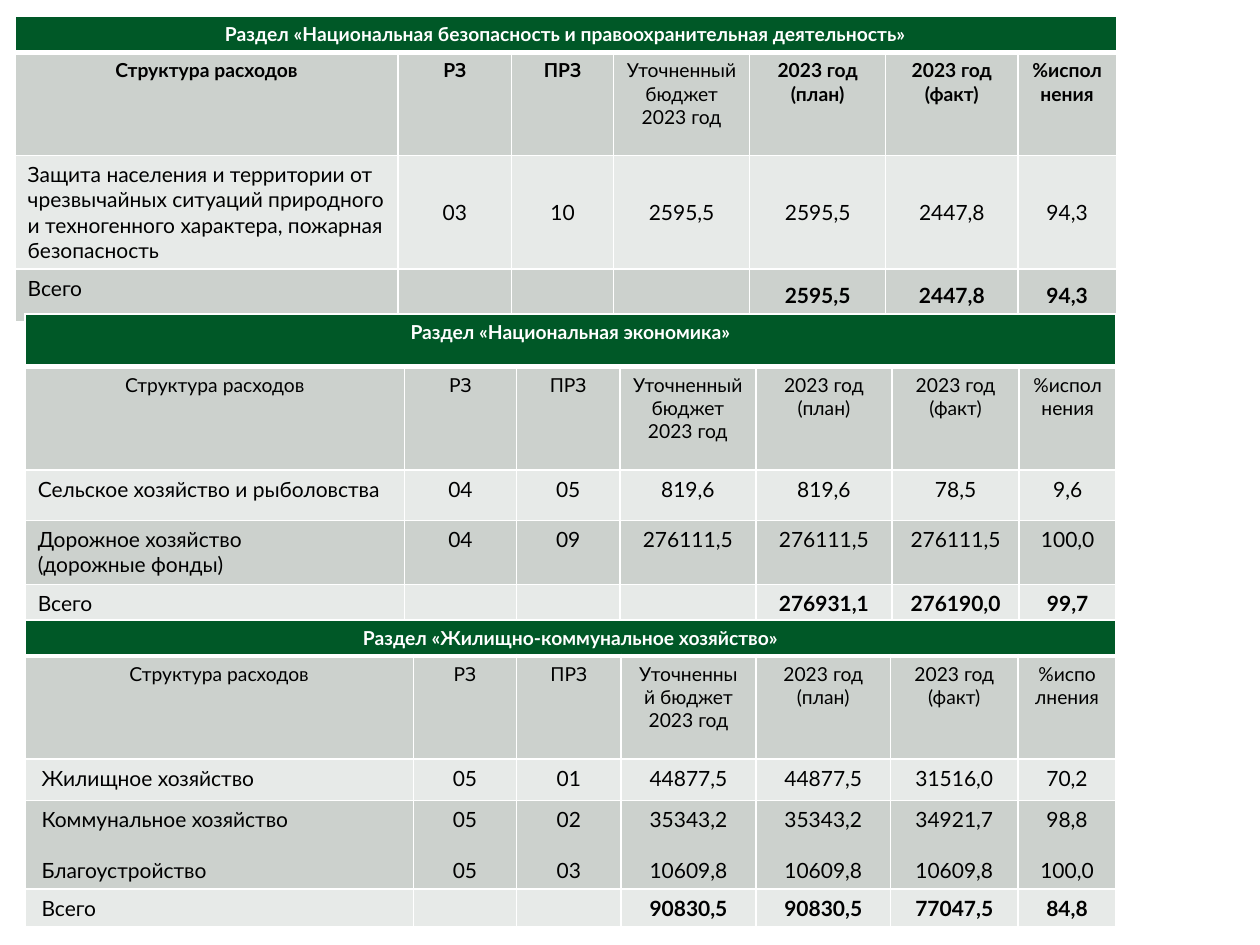
from lxml.etree import SubElement
from pptx import Presentation
from pptx.dml.color import RGBColor
from pptx.enum.text import MSO_ANCHOR, PP_ALIGN
from pptx.oxml.ns import qn
from pptx.util import Inches, Pt

WHITE = RGBColor(0xFF, 0xFF, 0xFF)
BLACK = RGBColor(0, 0, 0)
GREEN = RGBColor(0x00, 0x58, 0x27)
DARK_BAND = RGBColor(0xCC, 0xD1, 0xCD)
LIGHT_BAND = RGBColor(0xE7, 0xEA, 0xE8)

HEADER = ["Структура расходов", "РЗ", "ПРЗ", "Уточненный бюджет 2023 год",
          "2023 год\n(план)", "2023 год (факт)", "%исполнения"]
BUDGET_COL = 3


class BudgetSlide:
    font = "Lato"
    small, normal = Pt(11), Pt(12)

    def __init__(self, prs):
        self.s = prs.slides.add_slide(prs.slide_layouts[6])

    def borders(self, cell, bottom=1):
        tcPr = cell._tc.get_or_add_tcPr()
        for side, width in (("L", 1), ("R", 1), ("T", 1), ("B", bottom)):
            ln = SubElement(tcPr, qn(f"a:ln{side}"), w=str(Pt(width)))
            fill = SubElement(ln, qn("a:solidFill"))
            SubElement(fill, qn("a:srgbClr"), val=str(WHITE))

    def cell(self, cell, text, fill, size, color=BLACK, bold=False,
             align=PP_ALIGN.CENTER, gap=0, margin=0.1, bottom=1):
        self.borders(cell, bottom)
        cell.fill.solid()
        cell.fill.fore_color.rgb = fill
        cell.margin_left = cell.margin_right = Inches(margin)
        tf = cell.text_frame
        tf.text = text
        for i, p in enumerate(tf.paragraphs):
            p.alignment = align
            if i and gap:
                p.space_before = Pt(gap)
            p.font.name, p.font.size, p.font.bold = self.font, size, bold
            p.font.color.rgb = color
            if not text:  # keeps an empty cell from stretching its row
                p._p.get_or_add_endParaRPr().set("sz", str(int(size.pt * 100)))

    def table(self, left, top, cols, heights, title, rows,
              bold_header=False, middle=False, gap=0, margin=0.1):
        grid = self.s.shapes.add_table(
            len(heights), len(cols), Inches(left), Inches(top),
            Inches(sum(cols)), Inches(sum(heights))).table
        grid.first_row = grid.horz_banding = False
        for column, width in zip(grid.columns, cols):
            column.width = Inches(width)
        for row, height in zip(grid.rows, heights):
            row.height = Inches(height)

        # Section title across all columns
        grid.cell(0, 0).merge(grid.cell(0, len(cols) - 1))
        for c in range(len(cols)):
            self.cell(grid.cell(0, c), "" if c else title, GREEN, self.small,
                      WHITE, True, margin=margin, bottom=3)

        # Column headings
        for c, text in enumerate(HEADER):
            self.cell(grid.cell(1, c), text, DARK_BAND, self.small,
                      bold=bold_header and c != BUDGET_COL, margin=margin)

        # Expense lines; the last one is the total
        for r, values in enumerate(rows, 2):
            is_total = r == len(heights) - 1
            for c, text in enumerate(values):
                cell = grid.cell(r, c)
                self.cell(cell, text, DARK_BAND if r % 2 else LIGHT_BAND,
                          self.normal, bold=is_total and c > 0,
                          align=PP_ALIGN.CENTER if c else PP_ALIGN.LEFT,
                          gap=gap, margin=margin)
                if middle and c:
                    cell.vertical_anchor = MSO_ANCHOR.MIDDLE


def main():
    prs = Presentation()
    prs.slide_width, prs.slide_height = Inches(10), Inches(7.5)
    slide = BudgetSlide(prs)

    # National security
    slide.table(
        0.12, 0.13, [3.04, 0.9, 0.81, 1.08, 1.08, 1.05, 0.78],
        [0.24, 0.82, 0.85, 0.42],
        "Раздел «Национальная безопасность и правоохранительная деятельность»",
        [["Защита населения и территории от чрезвычайных ситуаций природного "
          "и техногенного характера, пожарная безопасность",
          "03", "10", "2595,5", "2595,5", "2447,8", "94,3"],
         ["Всего", "", "", "", "2595,5", "2447,8", "94,3"]],
        bold_header=True, middle=True)

    # National economy
    slide.table(
        0.2, 2.49, [3.01, 0.89, 0.82, 1.08, 1.08, 1.01, 0.77],
        [0.42, 0.82, 0.4, 0.51, 0.3],
        "Раздел «Национальная экономика»",
        [["Сельское хозяйство и рыболовства",
          "04", "05", "819,6", "819,6", "78,5", "9,6"],
         ["Дорожное хозяйство\n(дорожные фонды)",
          "04", "09", "276111,5", "276111,5", "276111,5", "100,0"],
         ["Всего", "", "", "", "276931,1", "276190,0", "99,7"]])

    # Housing and utilities
    slide.table(
        0.2, 4.92, [3.08, 0.82, 0.83, 1.07, 1.07, 1.01, 0.78],
        [0.27, 0.82, 0.33, 0.7, 0.29],
        "Раздел «Жилищно-коммунальное хозяйство»",
        [["Жилищное хозяйство",
          "05", "01", "44877,5", "44877,5", "31516,0", "70,2"],
         ["Коммунальное хозяйство\nБлагоустройство", "05\n05", "02\n03",
          "35343,2\n10609,8", "35343,2\n10609,8", "34921,7\n10609,8",
          "98,8\n100,0"],
         ["Всего", "", "", "90830,5", "90830,5", "77047,5", "84,8"]],
        gap=14.4, margin=0.13)

    prs.save("out.pptx")


if __name__ == "__main__":
    main()
